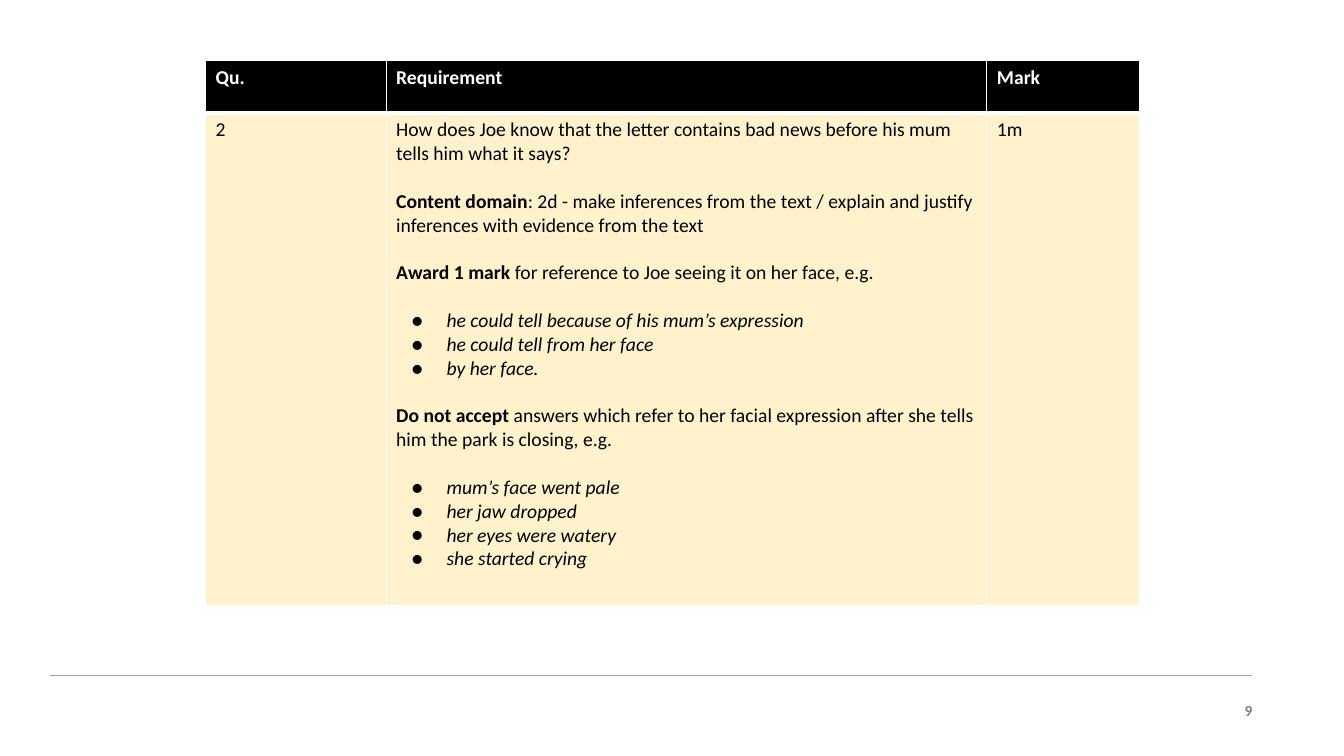
from lxml.etree import SubElement as Sub
from pptx import Presentation
from pptx.dml.color import RGBColor
from pptx.enum.shapes import MSO_CONNECTOR as Link
from pptx.enum.text import PP_ALIGN as Align
from pptx.oxml import parse_xml
from pptx.oxml.ns import nsdecls, qn
from pptx.util import Cm, Pt

BLACK = RGBColor(0x00, 0x00, 0x00)
WHITE = RGBColor(0xFF, 0xFF, 0xFF)
CREAM = RGBColor(0xFF, 0xF2, 0xCC)
RULE = RGBColor(0xA5, 0xA5, 0xA5)
GREY = RGBColor(0x7F, 0x7F, 0x7F)

FONT = "Calibri"
GAP = Pt(17)
COLS = [4.55, 15.14, 3.84]
ROWS = [1.32, 12.4]
HEADS = ["Qu.", "Requirement", "Mark"]

# Each group opens with a statement of (text, bold) runs, then its bullets.
GROUPS = [
    ([("How does Joe know that the letter contains bad news before his mum "
       "tells him what it says?", False)], []),
    ([("Content domain", True),
      (": 2d - make inferences from the text / explain and justify "
       "inferences with evidence from the text", False)], []),
    ([("Award 1 mark", True),
      (" for reference to Joe seeing it on her face, e.g.", False)],
     ["he could tell because of his mum’s expression",
      "he could tell from her face",
      "by her face."]),
    ([("Do not accept ", True),
      ("answers which refer to her facial expression after she tells "
       "him the park is closing, e.g.", False)],
     ["mum’s face went pale",
      "her jaw dropped",
      "her eyes were watery",
      "she started crying"]),
]


def add_run(para, text, color=BLACK, bold=False, italic=False, size=14):
    run = para.add_run()
    run.text = text
    font = run.font
    font.name, font.size = FONT, Pt(size)
    font.bold, font.italic = bold, italic
    font.color.rgb = color


def add_bullet(para):
    props = para._p.get_or_add_pPr()
    props.set("marL", str(Cm(1.27)))
    props.set("indent", str(-Cm(0.89)))
    Sub(Sub(props, qn("a:buClr")), qn("a:srgbClr"), val=str(BLACK))
    Sub(props, qn("a:buFont"), typeface=FONT)
    Sub(props, qn("a:buChar"), char="●")


def style_cell(cell, fill, base):
    """Fill the cell and draw white borders, the bottom one base points wide."""
    cell.fill.solid()
    cell.fill.fore_color.rgb = fill
    props = cell._tc.get_or_add_tcPr()
    widths = {"lnL": 1, "lnR": 1, "lnT": 1, "lnB": base}
    for spot, (tag, width) in enumerate(widths.items()):
        props.insert(spot, parse_xml(
            f'<a:{tag} {nsdecls("a")} w="{Pt(width)}"><a:solidFill>'
            f'<a:srgbClr val="{WHITE}"/></a:solidFill></a:{tag}>'))


def fill_answer(frame):
    para = frame.paragraphs[0]
    for index, (runs, points) in enumerate(GROUPS):
        if index:
            para = frame.add_paragraph()
            para.space_before = GAP
        for text, bold in runs:
            add_run(para, text, bold=bold)
        for spot, point in enumerate(points):
            para = frame.add_paragraph()
            add_bullet(para)
            para.space_before = Pt(0) if spot else GAP
            add_run(para, point, italic=True)


def add_marks(slide):
    """Add the mark scheme table."""
    table = slide.shapes.add_table(
        len(ROWS), len(COLS), Cm(5.18), Cm(1.53),
        Cm(sum(COLS)), Cm(sum(ROWS))).table
    table.first_row = table.horz_banding = False
    for col, width in zip(table.columns, COLS):
        col.width = Cm(width)
    for row, height in zip(table.rows, ROWS):
        row.height = Cm(height)
    for index, head in enumerate(HEADS):
        cell = table.cell(0, index)
        style_cell(cell, BLACK, 3)
        add_run(cell.text_frame.paragraphs[0], head, WHITE, bold=True)
        style_cell(table.cell(1, index), CREAM, 1)
    for index, text in ((0, "2"), (2, "1m")):
        add_run(table.cell(1, index).text_frame.paragraphs[0], text)
    fill_answer(table.cell(1, 1).text_frame)


def add_rule(slide):
    y = Cm(17.02)
    line = slide.shapes.add_connector(Link.STRAIGHT, Cm(1.27), y, Cm(31.55), y)
    line.line.color.rgb = RULE
    line.line.width = Pt(0.75)
    Sub(line._element.spPr, qn("a:effectLst"))


def add_number(slide):
    box = slide.shapes.add_textbox(Cm(30.84), Cm(17.55), Cm(0.97), Cm(0.74))
    box.text_frame.word_wrap = True
    para = box.text_frame.paragraphs[0]
    para.alignment = Align.RIGHT
    add_run(para, "9", GREY, bold=True, size=11)


def main():
    deck = Presentation()
    deck.slide_width, deck.slide_height = Cm(33.87), Cm(19.05)
    slide = deck.slides.add_slide(deck.slide_layouts[6])
    add_rule(slide)
    add_number(slide)
    add_marks(slide)
    deck.save("out.pptx")


if __name__ == "__main__":
    main()
